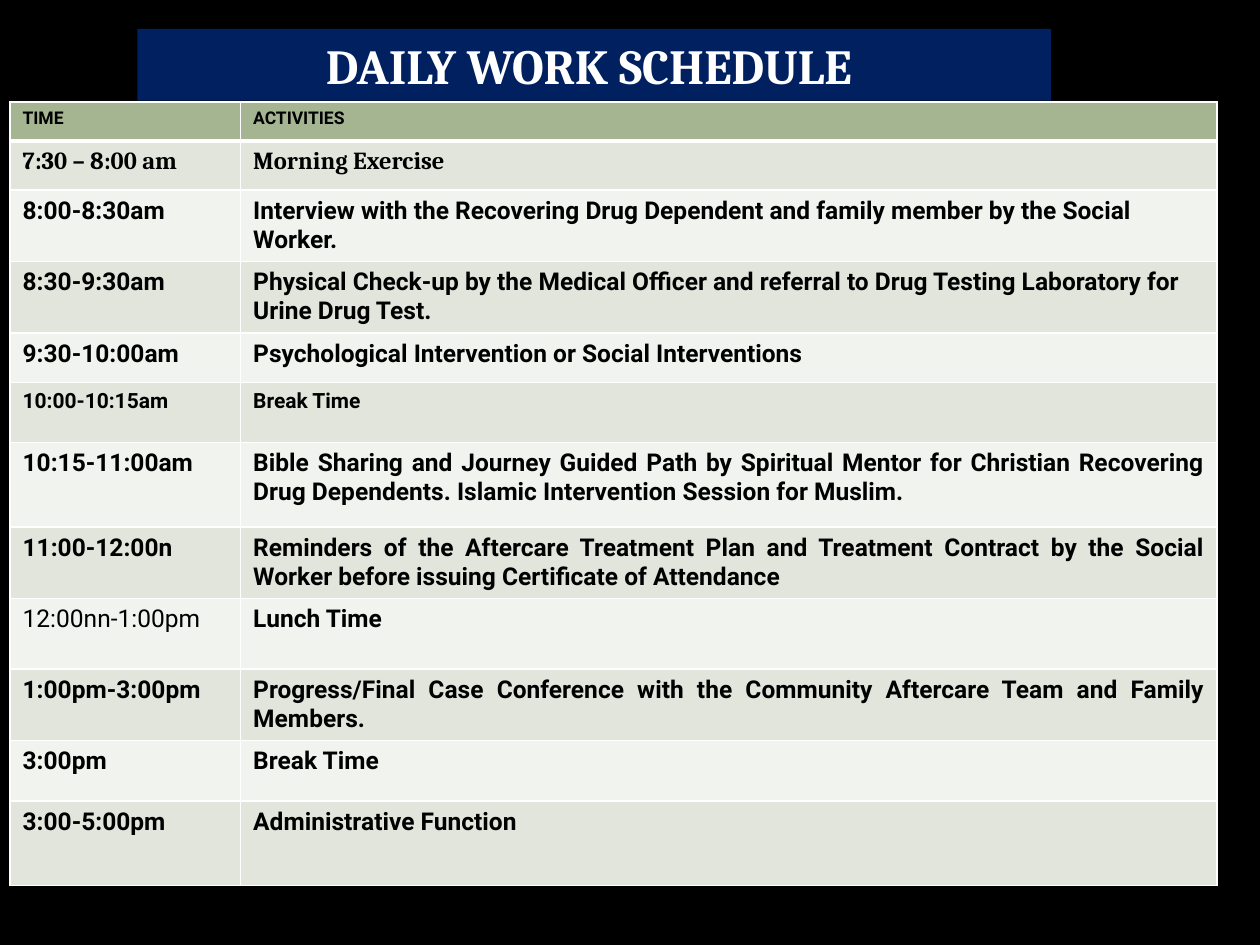
from lxml import etree
from pptx import Presentation
from pptx.dml.color import RGBColor
from pptx.enum import shapes, text
from pptx.oxml import ns
from pptx.util import Inches, Pt

BLACK = RGBColor(0x00, 0x00, 0x00)
WHITE = RGBColor(0xFF, 0xFF, 0xFF)
NAVY = RGBColor(0x00, 0x20, 0x60)
HEADER_GREEN = RGBColor(0xA5, 0xB5, 0x92)
BANDS = (RGBColor(0xF0, 0xF3, 0xEE), RGBColor(0xE1, 0xE5, 0xDC))

TITLE = "DAILY WORK SCHEDULE "
COLUMN_WIDTHS = (1.83, 7.75)
FIRST_JUSTIFIED_ROW = 6
SCHEDULE = [
    (0.31, "TIME", "ACTIVITIES"),
    (0.39, "7:30 – 8:00 am", "Morning Exercise"),
    (0.47, "8:00-8:30am", "Interview with the Recovering Drug Dependent and family member "
     "by the Social Worker."),
    (0.48, "8:30-9:30am", "Physical Check-up by the Medical Officer and referral to Drug "
     "Testing Laboratory for Urine Drug Test."),
    (0.39, "9:30-10:00am", "Psychological Intervention or Social Interventions"),
    (0.48, "10:00-10:15am", "Break Time"),
    (0.67, "10:15-11:00am", "Bible Sharing and Journey Guided Path by Spiritual Mentor for "
     "Christian Recovering Drug Dependents. Islamic Intervention Session for Muslim."),
    (0.48, "11:00-12:00n", "Reminders of the Aftercare Treatment Plan and Treatment Contract "
     "by the Social Worker before issuing Certificate of Attendance"),
    (0.56, "12:00nn-1:00pm", "Lunch Time"),
    (0.48, "1:00pm-3:00pm", "Progress/Final Case Conference with the Community Aftercare "
     "Team and Family Members."),
    (0.48, "3:00pm", "Break Time"),
    (0.67, "3:00-5:00pm", "Administrative Function"),
]
BODY_FORMAT = {"name": "Roboto", "size": Pt(14), "bold": True}
ROW_FORMATS = {
    0: {"size": Pt(10)},
    1: {"name": "Cambria"},
    5: {"size": Pt(12)},
}
CELL_FORMATS = {(8, 0): {"bold": False}}
TITLE_FORMAT = {"name": "Cambria", "size": Pt(28), "bold": True}


def write(frame, content, format_values, color, alignment):
    paragraph = frame.paragraphs[0]
    paragraph.alignment = alignment
    run = paragraph.add_run()
    run.text = content
    for name, value in format_values.items():
        setattr(run.font, name, value)
    run.font.color.rgb = color


def add_borders(cell, widths):
    properties = cell._tc.get_or_add_tcPr()
    for position, (side, width) in enumerate(widths.items()):
        line = etree.Element(ns.qn(f"a:ln{side}"), w=str(Pt(width)))
        fill = etree.SubElement(line, ns.qn("a:solidFill"))
        etree.SubElement(fill, ns.qn("a:srgbClr"), val=str(WHITE))
        properties.insert(position, line)


def add_title(slide):
    banner = slide.shapes.add_shape(
        shapes.MSO_SHAPE.RECTANGLE, Inches(1.09), Inches(0.23), Inches(7.25), Inches(0.57))
    banner.shadow.inherit = False
    banner.fill.solid()
    banner.fill.fore_color.rgb = NAVY
    banner.line.fill.background()
    frame = banner.text_frame
    frame.word_wrap = True
    frame.auto_size = text.MSO_AUTO_SIZE.SHAPE_TO_FIT_TEXT
    frame.vertical_anchor = text.MSO_ANCHOR.TOP
    write(frame, TITLE, TITLE_FORMAT, WHITE, text.PP_ALIGN.CENTER)


def add_schedule(slide):
    total_height = sum(row[0] for row in SCHEDULE)
    table = slide.shapes.add_table(
        len(SCHEDULE), len(COLUMN_WIDTHS), Inches(0.08), Inches(0.81),
        Inches(sum(COLUMN_WIDTHS)), Inches(total_height)).table
    for column, width in zip(table.columns, COLUMN_WIDTHS):
        column.width = Inches(width)
    for row_index, (height, *entries) in enumerate(SCHEDULE):
        table.rows[row_index].height = Inches(height)
        for column_index, entry in enumerate(entries):
            cell = table.cell(row_index, column_index)
            cell.fill.solid()
            cell.fill.fore_color.rgb = BANDS[row_index % 2] if row_index else HEADER_GREEN
            add_borders(cell, {"L": 1, "R": 1, "T": 3 if row_index == 1 else 1,
                               "B": 1 if row_index else 3})
            format_values = {**BODY_FORMAT, **ROW_FORMATS.get(row_index, {}),
                             **CELL_FORMATS.get((row_index, column_index), {})}
            justified = column_index == 1 and row_index >= FIRST_JUSTIFIED_ROW
            alignment = text.PP_ALIGN.JUSTIFY if justified else text.PP_ALIGN.LEFT
            write(cell.text_frame, entry, format_values, BLACK, alignment)


def main():
    presentation = Presentation()
    presentation.slide_width = Inches(10)
    presentation.slide_height = Inches(7.5)
    slide = presentation.slides.add_slide(presentation.slide_layouts[6])
    slide.background.fill.solid()
    slide.background.fill.fore_color.rgb = BLACK
    add_title(slide)
    add_schedule(slide)
    presentation.save("out.pptx")


if __name__ == "__main__":
    main()
